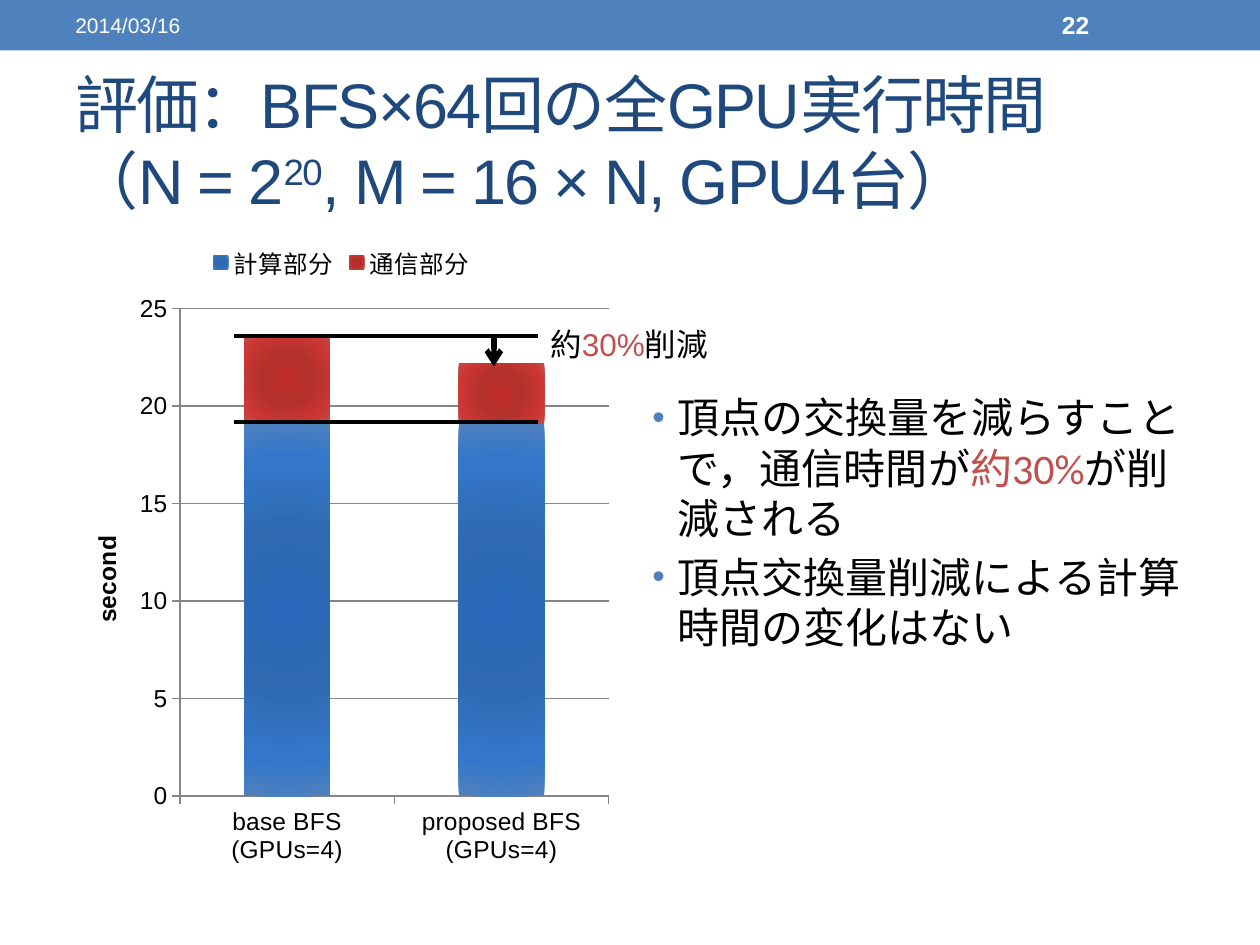
from dataclasses import dataclass

from lxml import etree
from pptx import Presentation
from pptx.chart.data import CategoryChartData
from pptx.dml.color import RGBColor
from pptx.enum.chart import XL_CHART_TYPE as ChartType, XL_LEGEND_POSITION as LegendPos
from pptx.enum.chart import XL_TICK_MARK as Tick
from pptx.enum.shapes import MSO_CONNECTOR as Connector, MSO_SHAPE as Shape
from pptx.enum.text import MSO_ANCHOR as Anchor
from pptx.oxml import parse_xml
from pptx.oxml.ns import nsdecls, qn
from pptx.util import Inches, Pt

BLUE, RED, NAVY = "4F81BD", "C0504D", "1F497D"
BLACK, WHITE, GRAY = "000000", "FFFFFF", "868686"


@dataclass
class Run:
    text: str
    color: str = BLACK
    size: float = 18
    font: str = "Arial"
    bold: bool = False
    spacing: int = 0
    baseline: int = 0


@dataclass
class TextBox:
    box: tuple
    paragraphs: list
    anchor: Anchor = Anchor.TOP
    bulleted: bool = False


@dataclass
class Line:
    start: tuple
    end: tuple
    width: float = 2.25
    arrow: bool = False


@dataclass
class Series:
    name: str
    values: tuple
    stops: dict  # radial gradient, centre to edge: percent -> colour


def rgb(value: str) -> RGBColor:
    return RGBColor.from_string(value)


def style_font(font, size: float, color: str = BLACK, name: str = "Arial", bold: bool = False) -> None:
    for key, value in {"size": Pt(size), "name": name, "bold": bold}.items():
        setattr(font, key, value)
    font.color.rgb = rgb(color)


def add_bullet(p) -> None:
    pPr = p._p.get_or_add_pPr()
    pPr.set("marL", str(Inches(0.2)))
    pPr.set("indent", str(-Inches(0.2)))
    for xml in (
        f'<a:spcBef {nsdecls("a")}><a:spcPct val="20000"/></a:spcBef>',
        f'<a:buClr {nsdecls("a")}><a:srgbClr val="{BLUE}"/></a:buClr>',
        f'<a:buSzPct {nsdecls("a")} val="85000"/>',
        f'<a:buFont {nsdecls("a")} typeface="Arial"/>',
        f'<a:buChar {nsdecls("a")} char="•"/>',
    ):
        pPr.append(parse_xml(xml))


def add_text(s, item: TextBox) -> None:
    tf = s.shapes.add_textbox(*map(Inches, item.box)).text_frame
    tf.word_wrap = True
    tf.vertical_anchor = item.anchor
    for i, runs in enumerate(item.paragraphs):
        p = tf.add_paragraph() if i else tf.paragraphs[0]
        if item.bulleted:
            add_bullet(p)
        for run in runs:
            if run.text == "\n":
                p.add_line_break()
                continue
            r = p.add_run()
            r.text = run.text
            style_font(r.font, run.size, run.color, run.font, run.bold)
            rPr = r._r.get_or_add_rPr()
            for key, value in {"spc": run.spacing, "baseline": run.baseline}.items():
                if value:
                    rPr.set(key, str(value))


def add_line(s, line: Line) -> None:
    c = s.shapes.add_connector(Connector.STRAIGHT, *map(Inches, line.start + line.end))
    c.line.color.rgb = rgb(BLACK)
    c.line.width = Pt(line.width)
    if line.arrow:
        etree.SubElement(c.line._get_or_add_ln(), qn("a:tailEnd"), type="arrow")
    etree.SubElement(c._element.spPr, qn("a:effectLst"))


def fill_radial(series, stops: dict) -> None:
    gs = "".join(f'<a:gs pos="{pos * 1000}"><a:srgbClr val="{c}"/></a:gs>' for pos, c in stops.items())
    series._element.get_or_add_spPr().insert(0, parse_xml(
        f'<a:gradFill {nsdecls("a")} rotWithShape="1"><a:gsLst>{gs}</a:gsLst><a:path path="circle">'
        '<a:fillToRect l="50000" t="50000" r="50000" b="50000"/></a:path></a:gradFill>'))


def add_time_chart(s, box: tuple, categories: tuple, series: list) -> None:
    data = CategoryChartData()
    data.categories = categories
    for item in series:
        data.add_series(item.name, item.values)
    chart = s.shapes.add_chart(ChartType.COLUMN_STACKED, *map(Inches, box), data).chart
    style_font(chart.font, 14)
    chart.has_title = False
    chart.has_legend = True
    chart.legend.position = LegendPos.TOP
    chart.legend.include_in_layout = False
    style_font(chart.legend.font, 14)

    plot = chart.plots[0]
    for key, value in {"gap_width": 150, "overlap": 100, "vary_by_categories": False}.items():
        setattr(plot, key, value)
    for drawn, item in zip(plot.series, series):
        fill_radial(drawn, item.stops)

    # Axes
    value_axis = chart.value_axis
    for key, value in {"minimum_scale": 0, "maximum_scale": 25, "major_unit": 5}.items():
        setattr(value_axis, key, value)
    for axis in (chart.category_axis, value_axis):
        axis.major_tick_mark = Tick.OUTSIDE
        axis.format.line.color.rgb = rgb(GRAY)
        style_font(axis.tick_labels.font, 14)
    value_axis.major_gridlines.format.line.color.rgb = rgb(GRAY)
    r = value_axis.axis_title.text_frame.paragraphs[0].add_run()
    r.text = "second"
    style_font(r.font, 14, bold=True)

    # Inner plot area, as fractions of the chart
    area = chart._chartSpace.chart.plotArea
    for old in area.findall(qn("c:layout")):
        area.remove(old)
    fractions = {"x": 0.21, "y": 0.12, "w": 0.77, "h": 0.75}
    modes = "".join(f'<c:{k}Mode val="edge"/>' for k in "xy")
    sizes = "".join(f'<c:{k} val="{v}"/>' for k, v in fractions.items())
    area.insert(0, parse_xml(
        f'<c:layout {nsdecls("c")}><c:manualLayout><c:layoutTarget val="inner"/>'
        f"{modes}{sizes}</c:manualLayout></c:layout>"))


def main() -> None:
    prs = Presentation()
    prs.slide_width, prs.slide_height = Inches(10), Inches(7.5)
    s = prs.slides.add_slide(prs.slide_layouts[6])

    # Header band
    sp = s.shapes.add_shape(Shape.RECTANGLE, 0, 0, Inches(10), Inches(0.4))
    sp.shadow.inherit = False
    sp.fill.solid()
    sp.fill.fore_color.rgb = rgb(BLUE)
    sp.line.fill.background()

    # Stacked execution times
    add_time_chart(s, (0.5, 1.83, 4.42, 5.16), ("base BFS (GPUs=4)", "proposed BFS (GPUs=4)"), [
        Series("計算部分", (19.2, 19.1), {0: "2A69BD", 40: "2F6AB2", 80: "3477CA", 100: BLUE}),
        Series("通信部分", (4.4, 3.1), {0: "BE2B28", 40: "B3302D", 80: "CC3633", 100: RED}),
    ])

    # Reduction marks over the bars
    top, bottom, left, right = 2.67, 3.35, 1.86, 4.27
    for line in (
        Line((left, top), (right, top)),
        Line((3.92, top), (3.92, 2.91), width=3, arrow=True),
        Line((left, bottom), (right, bottom)),
    ):
        add_line(s, line)

    # Texts
    title = {"color": NAVY, "size": 36, "spacing": -100}
    body = {"size": 24, "font": "Calibri"}
    for item in (
        TextBox((0.5, 0.02, 3.17, 0.36), [[Run("2014/03/16", WHITE, 12)]], Anchor.MIDDLE),
        TextBox((8.33, 0.02, 1.17, 0.36), [[Run("22", WHITE, 14, bold=True)]], Anchor.MIDDLE),
        TextBox((0.5, 0.58, 9, 1.08), [[
            Run("評価：BFS×64回の全GPU実行時間", **title), Run("\n"), Run("（N = 2", **title),
            Run("20", baseline=30000, **title), Run(", M = 16 × N, GPU4台）", **title),
        ]], Anchor.MIDDLE),
        TextBox((5.08, 3.06, 4.42, 3.93), [
            [Run("頂点の交換量を減らすことで，通信時間が", **body), Run("約30%", RED, **body),
             Run("が削減される", **body)],
            [Run("頂点交換量削減による計算時間の変化はない", size=24)],
        ], bulleted=True),
        TextBox((4.27, 2.53, 1.46, 0.4), [[Run("約"), Run("30%", RED), Run("削減")]]),
    ):
        add_text(s, item)

    prs.save("out.pptx")


if __name__ == "__main__":
    main()
